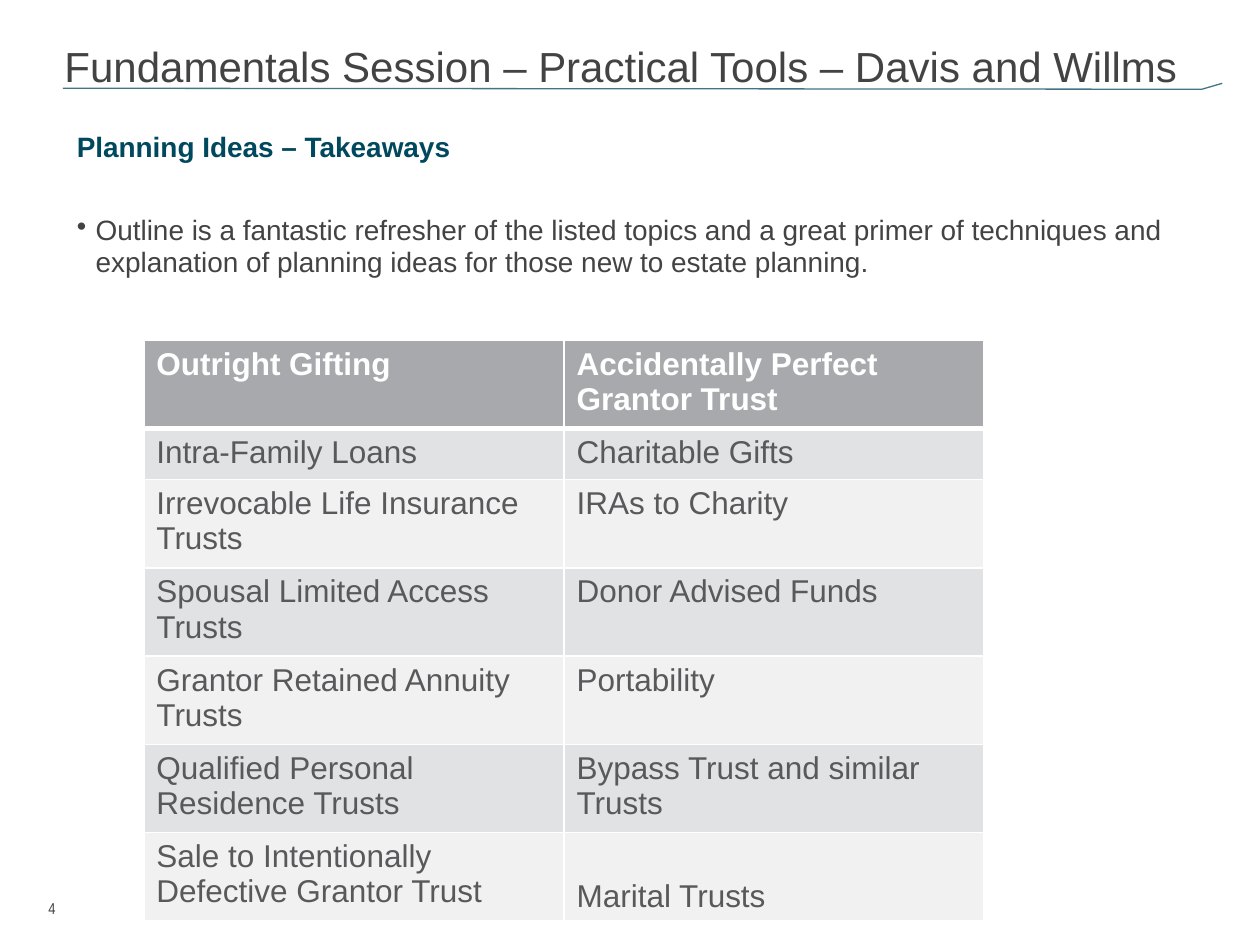
from lxml.etree import SubElement
from pptx import Presentation
from pptx.dml.color import RGBColor
from pptx.enum.text import MSO_ANCHOR, MSO_AUTO_SIZE, PP_ALIGN
from pptx.oxml import parse_xml
from pptx.oxml.ns import nsdecls, qn
from pptx.util import Cm, Pt

TEAL, DARK, GREY, WHITE = "00485E", "434344", "59595B", "FFFFFF"
HEAD, BANDS = "A7A9AC", ("E1E2E3", "F1F1F1")
ROWS = [
    ("Outright Gifting", "Accidentally Perfect Grantor Trust"),
    ("Intra-Family Loans", "Charitable Gifts"),
    ("Irrevocable Life Insurance Trusts", "IRAs to Charity"),
    ("Spousal Limited Access Trusts", "Donor Advised Funds"),
    ("Grantor Retained Annuity Trusts", "Portability"),
    ("Qualified Personal Residence Trusts", "Bypass Trust and similar Trusts"),
    ("Sale to Intentionally Defective Grantor Trust", "Marital Trusts"),
]


def color(code):
    """Turn a hex string into a colour."""
    return RGBColor.from_string(code)


def apply(item, **values):
    """Set each named attribute on an item."""
    for name, value in values.items():
        setattr(item, name, value)


def write(para, text, size, code, bold=False, face="Arial", **form):
    """Fill a paragraph with formatted text."""
    para.text = text
    apply(para, **form)
    apply(para.font, name=face, size=Pt(size), bold=bold)
    para.font.color.rgb = color(code)


def place(shape, left, top, width, height):
    """Position a shape, in centimetres."""
    apply(shape, left=Cm(left), top=Cm(top), width=Cm(width), height=Cm(height))


def flush(frame):
    """Anchor a text frame at the bottom without margins."""
    apply(frame, word_wrap=True, auto_size=MSO_AUTO_SIZE.NONE,
          vertical_anchor=MSO_ANCHOR.BOTTOM, margin_left=0, margin_right=0,
          margin_top=0, margin_bottom=0)


def add_rule(slide):
    """Draw the thin rule with its raised end."""
    points = [(Cm(x), Cm(y)) for x, y in ((1.27, 1.78), (24.23, 1.8), (24.64, 1.68))]
    build = slide.shapes.build_freeform(*points[0])
    build.add_line_segments(points[1:], close=False)
    rule = build.convert_to_shape()
    rule.shadow.inherit = False
    rule.fill.background()
    rule.line.width = Pt(0.75)
    rule.line.color.rgb = color(TEAL)
    tint = rule.line._ln.find(".//" + qn("a:srgbClr"))
    SubElement(tint, qn("a:alpha"), val="75000")


def add_title(slide):
    """Fill the title placeholder."""
    title = slide.shapes.title
    place(title, 1.3, 0.23, 22.86, 1.6)
    flush(title.text_frame)
    write(title.text_frame.paragraphs[0],
          "Fundamentals Session – Practical Tools – Davis and Willms",
          24, DARK, alignment=PP_ALIGN.LEFT)


def add_number(slide):
    """Add the page number."""
    box = slide.shapes.add_textbox(0, Cm(18.03), Cm(1.12), Cm(0.48))
    flush(box.text_frame)
    write(box.text_frame.paragraphs[0], "4", 9, DARK, face="Arial Narrow",
          alignment=PP_ALIGN.RIGHT)


def add_body(slide):
    """Add the subtitle and its bullet."""
    box = slide.shapes.add_textbox(Cm(1.3), Cm(2.54), Cm(22.83), Cm(3.6))
    frame = box.text_frame
    frame.word_wrap = True
    form = dict(line_spacing=0.93, space_after=Pt(6))
    write(frame.paragraphs[0], "Planning Ideas – Takeaways", 16, TEAL, True, **form)
    para = frame.add_paragraph()
    props = para._p.get_or_add_pPr()
    props.set("marL", str(Cm(0.38)))
    props.set("indent", str(-Cm(0.38)))
    SubElement(props, qn("a:buChar"), char="•")
    write(para, "Outline is a fantastic refresher of the listed topics and a great "
          "primer of techniques and explanation of planning ideas for those new "
          "to estate planning.", 16, DARK, space_before=Pt(24), **form)


def edge(cell, **widths):
    """Give a cell white borders, keyed by side."""
    props = cell._tc.get_or_add_tcPr()
    for spot, (side, width) in enumerate(widths.items()):
        props.insert(spot, parse_xml(
            f'<a:ln{side} {nsdecls("a")} w="{Pt(width)}"><a:solidFill>'
            f'<a:srgbClr val="{WHITE}"/></a:solidFill></a:ln{side}>'))


def add_grid(slide):
    """Add the banded table of topics."""
    grid = slide.shapes.add_table(len(ROWS), 2, Cm(2.9), Cm(6.86),
                                  Cm(16.94), Cm(1.03 * len(ROWS))).table
    for row, texts in enumerate(ROWS):
        grid.rows[row].height = Cm(1.03)
        for col, text in enumerate(texts):
            cell = grid.cell(row, col)
            cell.fill.solid()
            cell.fill.fore_color.rgb = color(BANDS[(row - 1) % 2] if row else HEAD)
            edge(cell, L=1, R=1, T=3 if row == 1 else 1, B=1 if row else 3)
            write(cell.text_frame.paragraphs[0], text, 18,
                  GREY if row else WHITE, not row)
    grid.cell(len(ROWS) - 1, 1).vertical_anchor = MSO_ANCHOR.BOTTOM


def main():
    """Build and save the slide."""
    deck = Presentation()
    apply(deck, slide_width=Cm(25.4), slide_height=Cm(19.05))
    slide = deck.slides.add_slide(deck.slide_layouts[5])
    for draw in (add_rule, add_number, add_title, add_body, add_grid):
        draw(slide)
    deck.save("out.pptx")


if __name__ == "__main__":
    main()
